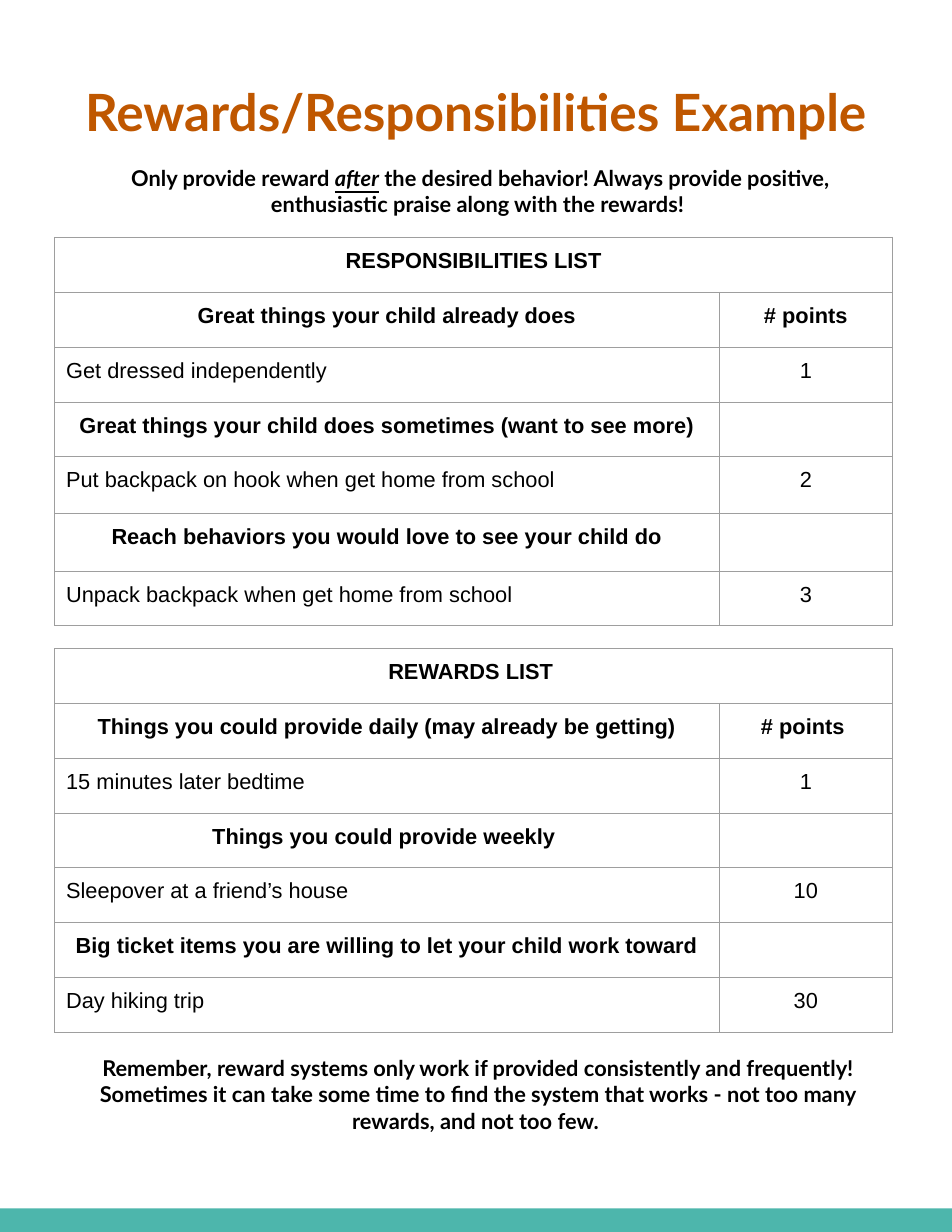
from lxml.etree import SubElement
from pptx import Presentation
from pptx.dml.color import RGBColor
from pptx.enum.shapes import MSO_SHAPE
from pptx.enum.text import PP_ALIGN
from pptx.oxml.ns import qn
from pptx.util import Inches, Pt

WIDTH, HEIGHT = 8.5, 11
INK, ORANGE, TEAL, GRID = "000000", "BF5700", "4DB6AC", "9E9E9E"
MARGIN = 0.1
TABLE_LEFT, COLUMNS, ROW = 0.49, (5.93, 1.55), 0.49
FOOTER = 0.21

TEXTS = [
    ((0.29, 0.62, 7.92, 0.88), 33, ORANGE, ["Rewards/Responsibilities Example"]),
    ((0.62, 1.37, 7.34, 0.7), 14, INK, [
        "Only provide reward ", "after",
        " the desired behavior! Always provide positive, "
        "enthusiastic praise along with the rewards! "]),
    ((0.49, 9.32, 7.56, 0.59), 14, INK, [
        "Remember, reward systems only work if provided consistently and frequently! "
        "Sometimes it can take some time to find the system that works - "
        "not too many rewards, and not too few. "]),
]
EMPHASIS = "after"

TABLES = [
    (2.12, {4: 0.51, 5: 0.51}, "RESPONSIBILITIES LIST", "# points", [
        ("Great things your child already does", "Get dressed independently", "1"),
        ("Great things your child does sometimes (want to see more)",
         "Put backpack on hook when get home from school", "2"),
        ("Reach behaviors you would love to see your child do",
         "Unpack backpack when get home from school", "3"),
    ]),
    (5.79, {}, "REWARDS LIST ", "# points ", [
        ("Things you could provide daily (may already be getting)",
         "15 minutes later bedtime", "1"),
        ("Things you could provide weekly ", "Sleepover at a friend’s house", "10"),
        ("Big ticket items you are willing to let your child work toward",
         "Day hiking trip", "30"),
    ]),
]


def color(value):
    return RGBColor.from_string(value)


def set_font(para, name, size, ink, bold):
    font = para.font
    font.name, font.size, font.bold = name, Pt(size), bold
    font.color.rgb = color(ink)


def add_text(page, place, size, ink, pieces):
    box = page.shapes.add_textbox(*map(Inches, place))
    frame = box.text_frame
    frame.word_wrap = True
    frame.margin_left = frame.margin_right = Inches(MARGIN)
    frame.margin_top = frame.margin_bottom = Inches(MARGIN)
    para = frame.paragraphs[0]
    para.alignment = PP_ALIGN.CENTER
    set_font(para, "Lato", size, ink, True)
    for piece in pieces:
        span = para.add_run()
        span.text = piece
        if piece == EMPHASIS:
            span.font.italic = span.font.underline = True


def add_borders(cell):
    properties = cell._tc.get_or_add_tcPr()
    for side in ("a:lnL", "a:lnR", "a:lnT", "a:lnB"):
        line = SubElement(properties, qn(side), w=str(Pt(0.75)))
        fill = SubElement(line, qn("a:solidFill"))
        SubElement(fill, qn("a:srgbClr"), val=GRID)


def fill_cell(cell, text, bold, centered):
    cell.margin_left = cell.margin_right = Inches(MARGIN)
    cell.margin_top = cell.margin_bottom = Inches(MARGIN)
    add_borders(cell)
    cell.fill.background()
    cell.text = text
    para = cell.text_frame.paragraphs[0]
    para.alignment = PP_ALIGN.CENTER if centered else PP_ALIGN.LEFT
    set_font(para, "Arial", 14, INK, bold)


def add_points_table(page, top, tall_rows, title, points_label, groups):
    rows = [(title, "", True)]
    for index, (heading, example, points) in enumerate(groups):
        rows.append((heading, "" if index else points_label, True))
        rows.append((example, points, False))
    heights = [tall_rows.get(index, ROW) for index in range(len(rows))]
    table = page.shapes.add_table(
        len(rows), len(COLUMNS), Inches(TABLE_LEFT), Inches(top),
        Inches(sum(COLUMNS)), Inches(sum(heights))).table
    table.first_row = table.horz_banding = False
    for column, width in zip(table.columns, COLUMNS):
        column.width = Inches(width)
    for index, (label, points, heading) in enumerate(rows):
        table.rows[index].height = Inches(heights[index])
        fill_cell(table.cell(index, 0), label, heading, heading)
        fill_cell(table.cell(index, 1), points, heading, True)
    table.cell(0, 0).merge(table.cell(0, 1))


def main():
    """Build the rewards and responsibilities example page."""
    deck = Presentation()
    deck.slide_width, deck.slide_height = Inches(WIDTH), Inches(HEIGHT)
    page = deck.slides.add_slide(deck.slide_layouts[6])
    footer = page.shapes.add_shape(
        MSO_SHAPE.RECTANGLE, 0, Inches(HEIGHT - FOOTER), Inches(WIDTH), Inches(FOOTER))
    footer.shadow.inherit = False
    footer.fill.solid()
    footer.fill.fore_color.rgb = color(TEAL)
    footer.line.fill.background()
    for text in TEXTS:
        add_text(page, *text)
    for table in TABLES:
        add_points_table(page, *table)
    deck.save("out.pptx")


if __name__ == "__main__":
    main()
